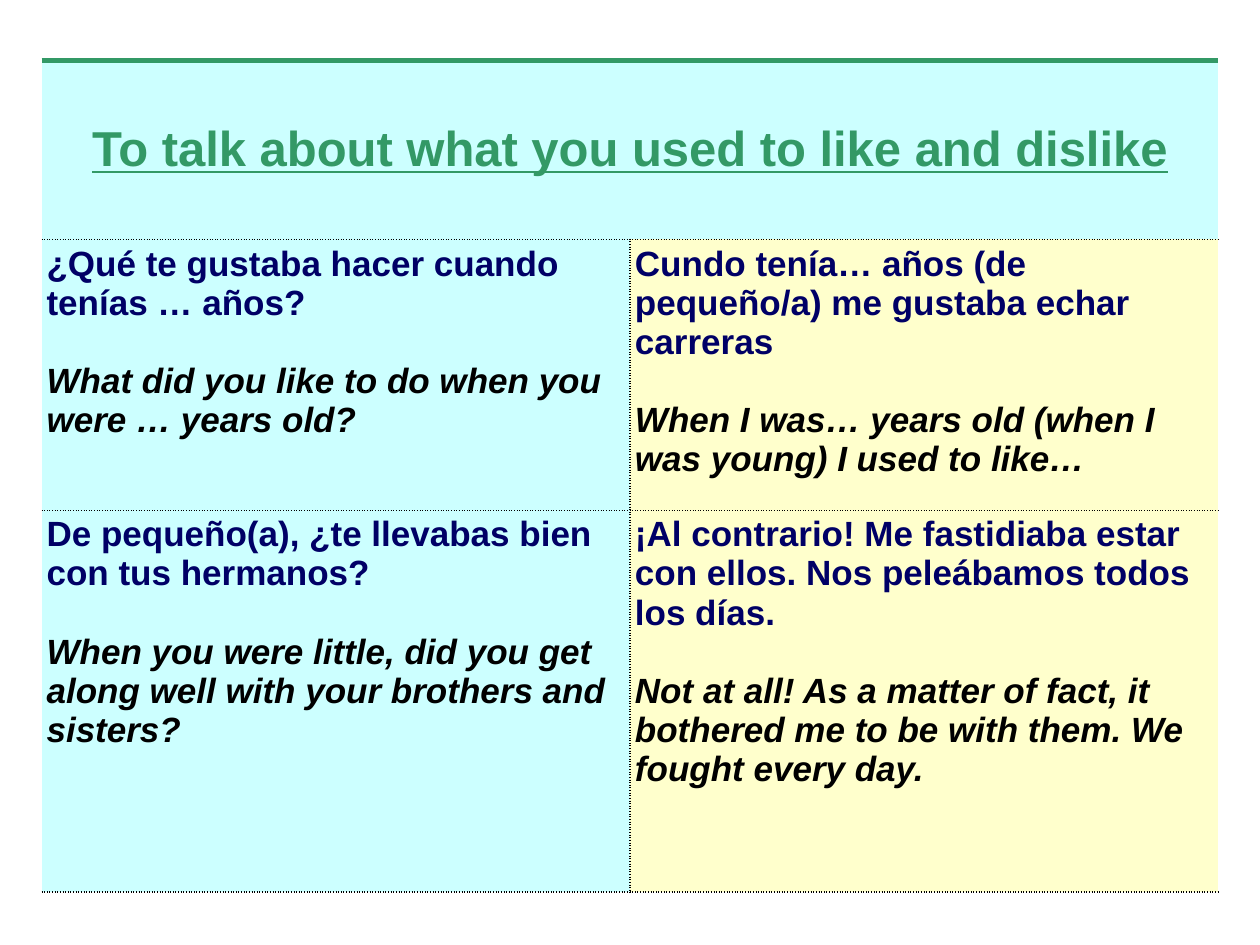
"""Build a slide with a table of Spanish phrases and their English meanings."""
from lxml import etree
from pptx import Presentation
from pptx.dml.color import RGBColor
from pptx.enum.text import MSO_ANCHOR, PP_ALIGN
from pptx.util import Inches, Pt

CENTER, LEFT = PP_ALIGN.CENTER, PP_ALIGN.LEFT
MIDDLE, TOP = MSO_ANCHOR.MIDDLE, MSO_ANCHOR.TOP
NAMESPACE = "http://schemas.openxmlformats.org/drawingml/2006/main"
COLORS = {"green": "339966", "navy": "000066", "black": "000000",
          "aqua": "CCFFFF", "cream": "FFFFCC"}
FILLS = ["aqua", "cream"]
COLUMN_WIDTH = 4.67
ROW_HEIGHTS = [1.42, 2.15, 3.03]
TITLE = "To talk about what you used to like and dislike"
PHRASES = [
    [("¿Qué te gustaba hacer cuando tenías … años?",
      "What did you like to do when you were … years old?"),
     ("Cundo tenía… años (de pequeño/a) me gustaba echar carreras",
      "When I was… years old (when I was young) I used to like…")],
    [("De pequeño(a), ¿te llevabas bien con tus hermanos?",
      "When you were little, did you get along well with your brothers and sisters?"),
     ("¡Al contrario! Me fastidiaba estar con ellos. Nos peleábamos todos los días.",
      "Not at all! As a matter of fact, it bothered me to be with them. We fought every day.")],
]


def style_cell(cell, fill, borders):
    cell.fill.solid()
    cell.fill.fore_color.rgb = RGBColor.from_string(COLORS[fill])
    cell.margin_left = cell.margin_right = Inches(0.04)
    cell.margin_top = cell.margin_bottom = Inches(0.04)
    properties = cell._tc.get_or_add_tcPr()
    for position, side in enumerate("LRTB"):
        line = etree.Element(f"{{{NAMESPACE}}}ln{side}")
        properties.insert(position, line)
        if side not in borders:
            etree.SubElement(line, f"{{{NAMESPACE}}}noFill")
            continue
        color, width, dash = borders[side]
        line.set("w", str(Pt(width)))
        paint = etree.SubElement(line, f"{{{NAMESPACE}}}solidFill")
        etree.SubElement(paint, f"{{{NAMESPACE}}}srgbClr", val=COLORS[color])
        etree.SubElement(line, f"{{{NAMESPACE}}}prstDash", val=dash)


def write_para(para, text, size, color, align=LEFT):
    para.text = text
    para.alignment = align
    para.font.name = "Arial"
    para.font.size = Pt(size)
    para.font.bold = True
    para.font.color.rgb = RGBColor.from_string(COLORS[color])


deck = Presentation()
deck.slide_width, deck.slide_height = Inches(10), Inches(7.5)
page = deck.slides.add_slide(deck.slide_layouts[6])
frame = page.shapes.add_table(
    3, 2, Inches(0.33), Inches(0.48), Inches(2 * COLUMN_WIDTH), Inches(sum(ROW_HEIGHTS)))
table = frame.table
table.first_row = table.horz_banding = False
for column in table.columns:
    column.width = Inches(COLUMN_WIDTH)
for row, height in zip(table.rows, ROW_HEIGHTS):
    row.height = Inches(height)

dotted = ("black", 0.75, "sysDot")
heading = table.cell(0, 0)
heading.merge(table.cell(0, 1))
for cell in table.rows[0].cells:
    style_cell(cell, "aqua", {"T": ("green", 3.75, "solid"), "B": dotted})
heading.vertical_anchor = MIDDLE
heading_para = heading.text_frame.paragraphs[0]
write_para(heading_para, TITLE, 28, "green", CENTER)
heading_para.font.underline = True

for row_number, pairs in enumerate(PHRASES, start=1):
    for column_number, (spanish, english) in enumerate(pairs):
        cell = table.cell(row_number, column_number)
        inner_side = "RL"[column_number]
        style_cell(cell, FILLS[column_number],
                   {inner_side: dotted, "T": dotted, "B": dotted})
        cell.vertical_anchor = TOP
        write_para(cell.text_frame.paragraphs[0], spanish, 20, "navy")
        meaning = cell.text_frame.add_paragraph()
        write_para(meaning, english, 20, "black")
        meaning.font.italic = True
        meaning.space_before = Pt(22.5)

deck.save("out.pptx")
